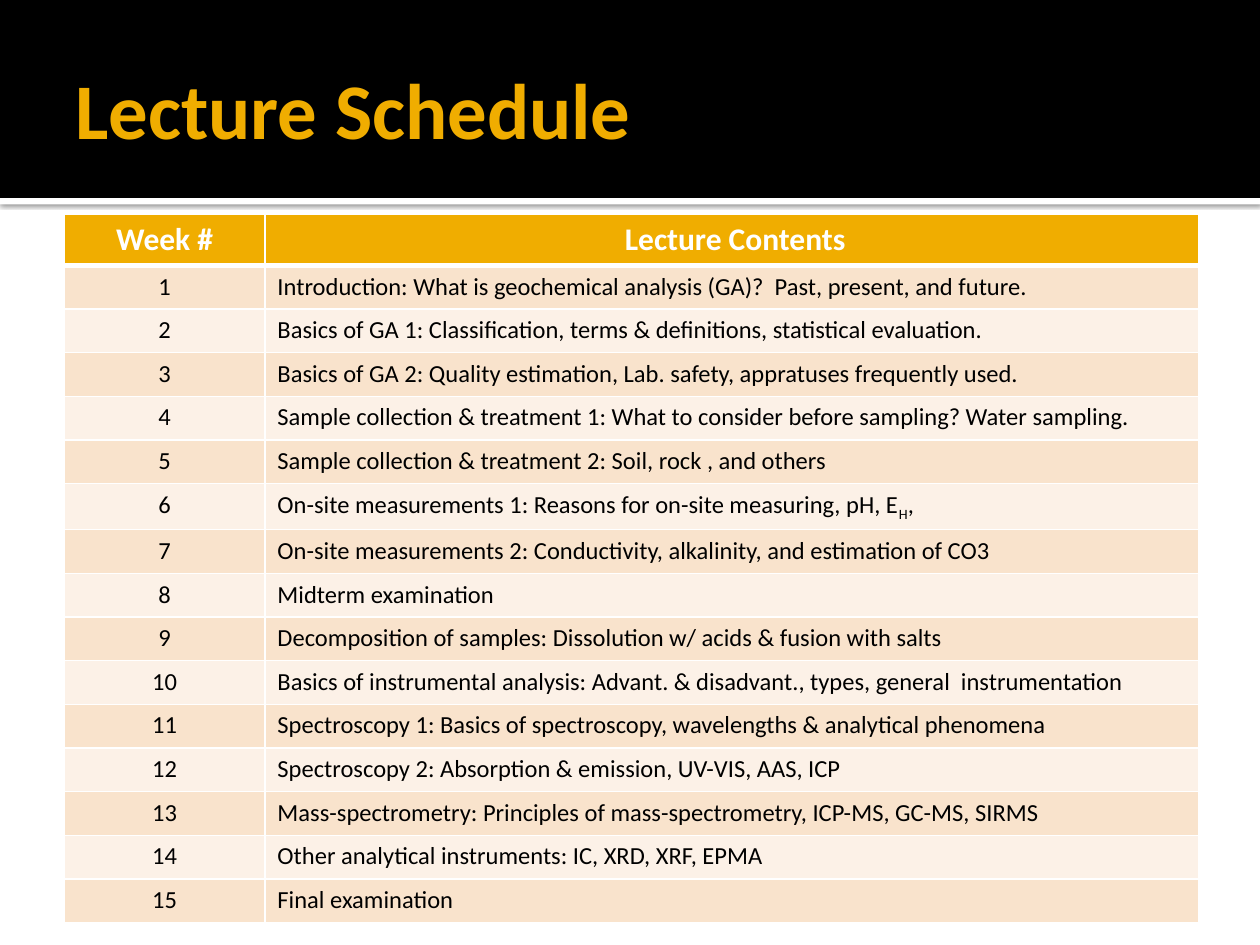
"""Build the lecture schedule slide."""
import lxml.etree
import pptx
import pptx.dml.color
import pptx.enum.shapes
import pptx.enum.text
import pptx.oxml
import pptx.oxml.ns
import pptx.util

Cm = pptx.util.Cm
Pt = pptx.util.Pt
ALIGN = pptx.enum.text.PP_ALIGN
FONT = "Calibri"
GOLD, WHITE, BLACK = "F0AD00", "FFFFFF", "000000"
BANDS = ("F9E3CC", "FCF1E7")

TITLE = "Lecture Schedule"
HEADS = ("Week #", " Lecture Contents")
TOPICS = [
    "Introduction: What is geochemical analysis (GA)?  Past, present, and future.",
    "Basics of GA 1: Classification, terms & definitions, statistical evaluation.",
    "Basics of GA 2: Quality estimation, Lab. safety, appratuses frequently used.",
    "Sample collection & treatment 1: What to consider before sampling? Water sampling.",
    "Sample collection & treatment 2: Soil, rock , and others",
    "On-site measurements 1: Reasons for on-site measuring, pH, E_H_,",
    "On-site measurements 2: Conductivity, alkalinity, and estimation of CO3",
    "Midterm examination",
    "Decomposition of samples: Dissolution w/ acids & fusion with salts",
    "Basics of instrumental analysis: Advant. & disadvant., types, general  instrumentation",
    "Spectroscopy 1: Basics of spectroscopy, wavelengths & analytical phenomena",
    "Spectroscopy 2: Absorption & emission, UV-VIS, AAS, ICP",
    "Mass-spectrometry: Principles of mass-spectrometry, ICP-MS, GC-MS, SIRMS",
    "Other analytical instruments: IC, XRD, XRF, EPMA",
    "Final examination",
]
WIDTHS = (4.04, 18.82)
HEAD_H, ROW_H = 1.03, 0.88
SHADOW = """<a:outerShdw %s blurRad="%d" dist="%d" dir="5400000" algn="t" rotWithShape="0">
<a:srgbClr val="000000"><a:alpha val="60000"/></a:srgbClr></a:outerShdw>"""


def paint(fmt, code):
    fmt.solid()
    fmt.fore_color.rgb = pptx.dml.color.RGBColor.from_string(code)


def style(par, size, code, bold):
    for run in par.runs:
        run.font.name = FONT
        run.font.size = Pt(size)
        run.font.bold = bold
        paint(run.font.fill, code)


def band(slide, top, height, code):
    rect = slide.shapes.add_shape(
        pptx.enum.shapes.MSO_SHAPE.RECTANGLE, 0, Cm(top), Cm(25.4), Cm(height))
    rect.shadow.inherit = False
    paint(rect.fill, code)
    rect.line.fill.background()
    return rect


def cast(shape):
    glow = SHADOW % (pptx.oxml.ns.nsdecls("a"), Pt(2.5), Pt(0.8))
    effects = shape._element.spPr.find(pptx.oxml.ns.qn("a:effectLst"))
    effects.append(pptx.oxml.parse_xml(glow))


def edge(cell, widths):
    props = cell._tc.get_or_add_tcPr()
    for spot, (side, width) in enumerate(zip("LRTB", widths)):
        line = lxml.etree.Element(pptx.oxml.ns.qn("a:ln" + side), w=str(Pt(width)))
        fill = lxml.etree.SubElement(line, pptx.oxml.ns.qn("a:solidFill"))
        lxml.etree.SubElement(fill, pptx.oxml.ns.qn("a:srgbClr"), val=WHITE)
        props.insert(spot, line)


def write(cell, text):
    par = cell.text_frame.paragraphs[0]
    first, *rest = text.split("_")
    par.text = first
    for spot, part in enumerate(rest):
        run = par.add_run()
        run.text = part
        if spot % 2 == 0:
            run._r.get_or_add_rPr().set("baseline", "-25000")
    return par


def head(slide):
    cast(band(slide, 3.99, 0.13, WHITE))
    band(slide, 0, 3.99, BLACK)
    box = slide.shapes.add_textbox(Cm(1.27), Cm(0.43), Cm(22.86), Cm(3.48))
    frame = box.text_frame
    frame.word_wrap = True
    frame.vertical_anchor = pptx.enum.text.MSO_ANCHOR.MIDDLE
    frame.margin_right = Cm(0.13)
    frame.text = TITLE
    style(frame.paragraphs[0], 45, GOLD, True)


def plan(slide):
    rows = [HEADS] + [(str(week), topic) for week, topic in enumerate(TOPICS, 1)]
    high = HEAD_H + ROW_H * len(TOPICS)
    table = slide.shapes.add_table(
        len(rows), len(WIDTHS), Cm(1.3), Cm(4.32), Cm(sum(WIDTHS)), Cm(high)).table
    for col, width in zip(table.columns, WIDTHS):
        col.width = Cm(width)
    for i, row in enumerate(rows):
        top = i == 0
        table.rows[i].height = Cm(HEAD_H if top else ROW_H)
        for j, text in enumerate(row):
            cell = table.cell(i, j)
            par = write(cell, text)
            par.alignment = ALIGN.CENTER if top or j == 0 else ALIGN.LEFT
            style(par, 18 if top else 14, WHITE if top else BLACK, top)
            paint(cell.fill, GOLD if top else BANDS[(i - 1) % 2])
            edge(cell, (1, 1, 3 if i == 1 else 1, 3 if top else 1))


def main():
    deck = pptx.Presentation()
    deck.slide_width, deck.slide_height = Cm(25.4), Cm(19.05)
    slide = deck.slides.add_slide(deck.slide_layouts[6])
    head(slide)
    plan(slide)
    deck.save("out.pptx")


if __name__ == "__main__":
    main()
